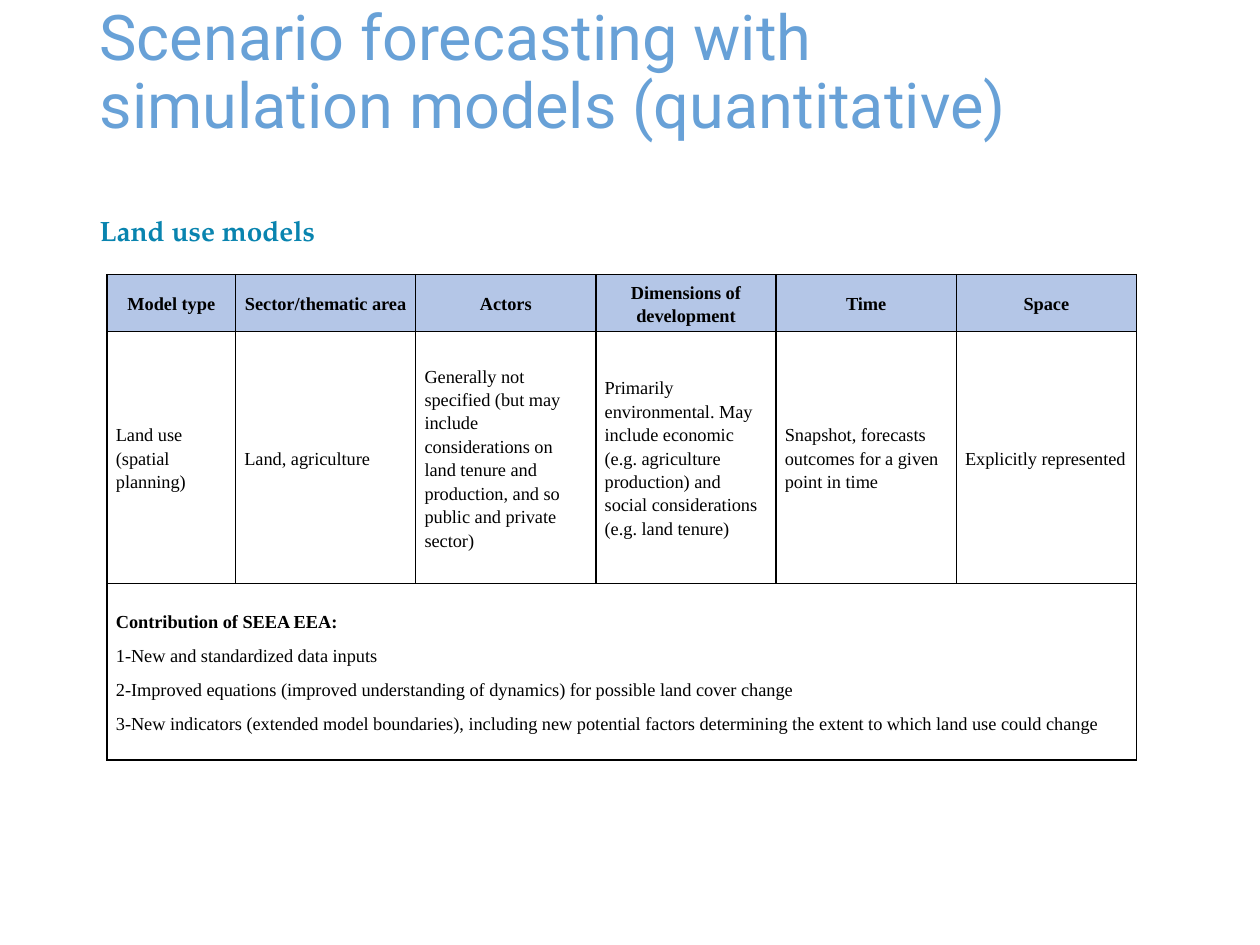
from pptx import Presentation
from pptx import util as u
from pptx.dml.color import RGBColor
from pptx.enum import text
from pptx.oxml import parse_xml
from pptx.oxml.ns import nsdecls

LEFT, CENTER, JUSTIFY = text.PP_ALIGN.LEFT, text.PP_ALIGN.CENTER, text.PP_ALIGN.JUSTIFY

HEADERS = ["Model type", "Sector/thematic area", "Actors",
           "Dimensions of development", "Time", "Space"]
LAND_USE = [
    "Land use (spatial planning)",
    "Land, agriculture",
    "Generally not specified (but may include considerations on land tenure "
    "and production, and so public and private sector)",
    "Primarily environmental. May include economic (e.g. agriculture "
    "production) and social considerations (e.g. land tenure)",
    "Snapshot, forecasts outcomes for a given point in time",
    "Explicitly represented",
]
CONTRIBUTION = [
    ("Contribution of SEEA EEA:", LEFT, True),
    ("1-New and standardized data inputs", JUSTIFY, False),
    ("2-Improved equations (improved understanding of dynamics) for possible "
     "land cover change", JUSTIFY, False),
    ("3-New indicators (extended model boundaries), including new potential "
     "factors determining the extent to which land use could change", LEFT, False),
]


def rgb(value):
    return RGBColor.from_string(value)


def set_all(obj, values):
    for name, value in values.items():
        setattr(obj, name, value)


class SlideBuilder:
    TITLE = dict(name="Roboto", size=u.Pt(36), bold=False)
    SUBTITLE = dict(name="TeX Gyre Pagella", size=u.Pt(16), bold=True)
    CELL = dict(name="Times New Roman", size=u.Pt(10.5))
    CELL_BOX = dict(margin_left=u.Inches(0.07), margin_right=u.Inches(0.07),
                    margin_top=0, margin_bottom=0,
                    vertical_anchor=text.MSO_ANCHOR.MIDDLE)
    CELL_PARAGRAPH = dict(line_spacing=1.15, space_before=u.Pt(0), space_after=u.Pt(6))
    HEADER_FILL = "B4C6E7"
    BORDER = "000000"

    def __init__(self, prs):
        self.slide = prs.slides.add_slide(prs.slide_layouts[1])

    def placeholder(self, sp, box, wording, font, color, spacing, anchor):
        """Move a placeholder and give it one left-aligned paragraph."""
        set_all(sp, dict(zip(("left", "top", "width", "height"), map(u.Inches, box))))
        tf = sp.text_frame
        tf.text = wording
        set_all(tf, dict(word_wrap=True, auto_size=text.MSO_AUTO_SIZE.NONE,
                         vertical_anchor=anchor))
        p = tf.paragraphs[0]
        set_all(p, dict(alignment=LEFT, line_spacing=spacing, space_before=u.Pt(0)))
        set_all(p.runs[0].font, font)
        p.runs[0].font.color.rgb = rgb(color)
        return p

    def title(self, wording):
        self.placeholder(self.slide.shapes.title, (0.69, 0.53, 7.5, 0.65), wording,
                         self.TITLE, "68A1D7", 0.9, text.MSO_ANCHOR.BOTTOM)

    def subtitle(self, wording):
        p = self.placeholder(self.slide.placeholders[1], (0.69, 1.62, 7.5, 3.62), wording,
                             self.SUBTITLE, "0984AF", 1.1, text.MSO_ANCHOR.TOP)
        pPr = p._p.get_or_add_pPr()
        pPr.set("marL", "0")
        pPr.set("indent", "0")
        pPr.append(parse_xml(f"<a:buNone {nsdecls('a')}/>"))

    def table(self, left, top, widths, heights):
        frame = self.slide.shapes.add_table(
            len(heights), len(widths), u.Inches(left), u.Inches(top),
            u.Inches(sum(widths)), u.Inches(sum(heights)))
        table = frame.table
        set_all(table, dict(first_row=False, horz_banding=False))
        for column, width in zip(table.columns, widths):
            column.width = u.Inches(width)
        for row, height in zip(table.rows, heights):
            row.height = u.Inches(height)
        for cell in table.iter_cells():
            self.borders(cell)
            cell.fill.background()
        return table

    def borders(self, cell):
        tcPr = cell._tc.get_or_add_tcPr()
        for side in "LRTB":
            tcPr.append(parse_xml(
                f'<a:ln{side} {nsdecls("a")} w="{u.Pt(1)}"><a:solidFill>'
                f'<a:srgbClr val="{self.BORDER}"/></a:solidFill></a:ln{side}>'))

    def cell(self, cell, lines, fill=None):
        """Fill a cell from (wording, alignment, bold) lines."""
        set_all(cell, self.CELL_BOX)
        if fill:
            cell.fill.solid()
            cell.fill.fore_color.rgb = rgb(fill)
        tf = cell.text_frame
        for i, (wording, alignment, bold) in enumerate(lines):
            p = tf.add_paragraph() if i else tf.paragraphs[0]
            set_all(p, dict(self.CELL_PARAGRAPH, alignment=alignment))
            r = p.add_run()
            r.text = wording
            set_all(r.font, dict(self.CELL, bold=bold))
            r.font.color.rgb = rgb("000000")


def main():
    prs = Presentation()
    prs.slide_width, prs.slide_height = u.Inches(10), u.Inches(7.5)
    s = SlideBuilder(prs)
    s.title("Scenario forecasting with simulation models (quantitative)")
    s.subtitle("Land use models")

    table = s.table(0.85, 2.18, [1.02] + [1.43] * 5, [0.45, 2, 1.4])
    for col, (header, detail) in enumerate(zip(HEADERS, LAND_USE)):
        s.cell(table.cell(0, col), [(header, CENTER, True)], s.HEADER_FILL)
        s.cell(table.cell(1, col), [(detail, LEFT, False)])
    table.cell(2, 0).merge(table.cell(2, len(HEADERS) - 1))
    s.cell(table.cell(2, 0), CONTRIBUTION)
    prs.save("out.pptx")


if __name__ == "__main__":
    main()
